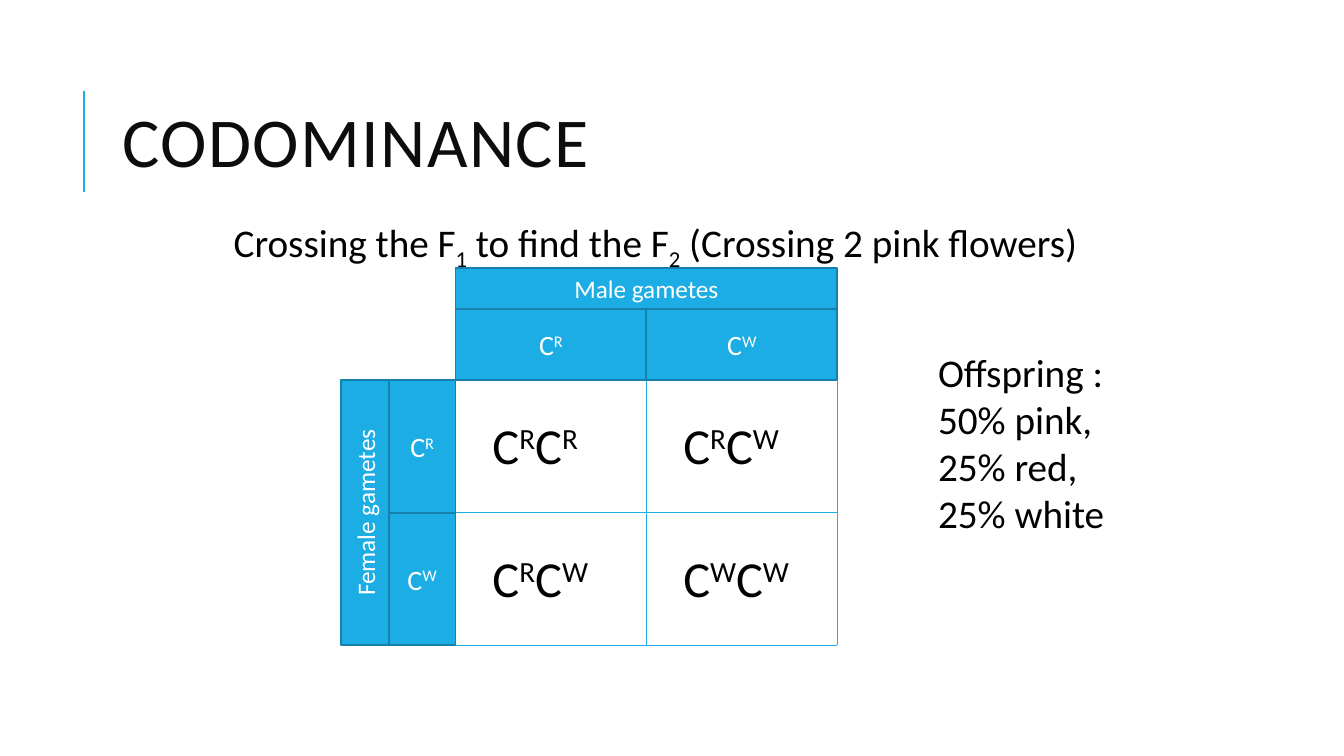
from dataclasses import dataclass

from lxml.etree import SubElement
from pptx import Presentation
from pptx.dml.color import RGBColor
from pptx.enum.shapes import MSO_CONNECTOR, MSO_SHAPE
from pptx.enum.text import MSO_ANCHOR, MSO_AUTO_SIZE, PP_ALIGN
from pptx.oxml.ns import qn
from pptx.util import Cm, Pt


@dataclass(frozen=True)
class Theme:
    font: str = "Calibri"
    accent: str = "1CADE4"
    border: str = "1580A9"
    title: str = "0D0D0D"
    text: str = "000000"
    light: str = "FFFFFF"
    title_size: int = 50
    body_size: int = 28
    genotype_size: int = 36
    allele_size: int = 20
    label_size: int = 18


THEME = Theme()
ALLELES = ("R", "W")
SUPERSCRIPT, SUBSCRIPT = 30, -25

# Punnett square, in centimetres
GRID_LEFT, GRID_TOP = 11.48, 9.58
COL_W, ROW_H = 4.81, 3.34
GRID_RIGHT, GRID_BOTTOM = GRID_LEFT + 2 * COL_W, GRID_TOP + 2 * ROW_H
MALE_H, MALE_ALLELE_H = 1.02, 1.8
FEMALE_W, FEMALE_ALLELE_W = 1.2, 1.68


def rgb(value):
    return RGBColor.from_string(value)


def write(tf, text, size, color=THEME.text, align=PP_ALIGN.LEFT, shift=SUPERSCRIPT,
          anchor=MSO_ANCHOR.TOP, spacing=None, tracking=None):
    """Fill a text frame, one paragraph a line; parts between bars are shifted."""
    tf.word_wrap = True
    tf.auto_size = MSO_AUTO_SIZE.NONE
    tf.vertical_anchor = anchor
    for i, line in enumerate(text.split("\n")):
        p = tf.add_paragraph() if i else tf.paragraphs[0]
        p.alignment = align
        p.line_spacing = spacing
        for j, part in enumerate(line.split("|")):
            if not part:
                continue
            r = p.add_run()
            r.text = part
            r.font.name = THEME.font
            r.font.size = Pt(size)
            r.font.color.rgb = rgb(color)
            props = r._r.get_or_add_rPr()
            if j % 2:
                props.set("baseline", str(shift * 1000))
            if tracking:
                props.set("spc", str(tracking * 100))


def place(sp, left, top, width, height):
    sp.left, sp.top, sp.width, sp.height = map(Cm, (left, top, width, height))


def add_text(s, box, text, size):
    sp = s.shapes.add_textbox(*map(Cm, box))
    write(sp.text_frame, text, size)


def add_header(s, box, text, size, upward=False):
    sp = s.shapes.add_shape(MSO_SHAPE.RECTANGLE, *map(Cm, box))
    sp.shadow.inherit = False
    sp.fill.solid()
    sp.fill.fore_color.rgb = rgb(THEME.accent)
    sp.line.color.rgb = rgb(THEME.border)
    sp.line.width = Pt(1.25)
    tf = sp.text_frame
    write(tf, text, size, THEME.light, PP_ALIGN.CENTER, anchor=MSO_ANCHOR.MIDDLE)
    if upward:
        tf._txBody.bodyPr.set("vert", "vert270")


def add_line(s, x1, y1, x2, y2, width=0.75):
    line = s.shapes.add_connector(MSO_CONNECTOR.STRAIGHT, *map(Cm, (x1, y1, x2, y2)))
    line.line.color.rgb = rgb(THEME.accent)
    line.line.width = Pt(width)
    SubElement(line._element.spPr, qn("a:effectLst"))


def add_title_and_body(s):
    add_line(s, 2.11, 4.83, 2.11, 2.29, 1.5)
    title, body = s.shapes.title, s.placeholders[1]
    place(title, 2.84, 1.63, 27, 4.17)
    write(title.text_frame, "CODOMINANCE", THEME.title_size, THEME.title,
          anchor=MSO_ANCHOR.MIDDLE, spacing=0.8, tracking=1)

    place(body, 5.51, 5.38, 22.86, 12.67)
    tf = body.text_frame
    tf.margin_left = tf.margin_right = tf.margin_top = tf.margin_bottom = Cm(0.13)
    write(tf, "Crossing the F|1| to find the F|2| (Crossing 2 pink flowers)",
          THEME.body_size, shift=SUBSCRIPT, spacing=0.9)
    p = tf.paragraphs[0]
    p.space_before, p.space_after = Pt(12), Pt(2)
    props = p._p.get_or_add_pPr()
    props.set("marL", str(Cm(0.25)))
    props.set("indent", "0")
    SubElement(props, qn("a:buNone"))


def add_punnett_square(s):
    allele_top = GRID_TOP - MALE_ALLELE_H
    allele_left = GRID_LEFT - FEMALE_ALLELE_W
    add_header(s, (GRID_LEFT, allele_top - MALE_H, 2 * COL_W, MALE_H),
               "Male gametes", THEME.label_size)
    add_header(s, (allele_left - FEMALE_W, GRID_TOP, FEMALE_W, 2 * ROW_H),
               "Female gametes", THEME.label_size, upward=True)
    for i, allele in enumerate(ALLELES):
        x, y = GRID_LEFT + i * COL_W, GRID_TOP + i * ROW_H
        add_header(s, (x, allele_top, COL_W, MALE_ALLELE_H),
                   f"C|{allele}|", THEME.allele_size)
        add_header(s, (allele_left, y, FEMALE_ALLELE_W, ROW_H),
                   f"C|{allele}|", THEME.allele_size)
        add_line(s, x + COL_W, GRID_TOP, x + COL_W, GRID_BOTTOM)
        add_line(s, GRID_LEFT, y + ROW_H, GRID_RIGHT, y + ROW_H)

    for row, female in enumerate(ALLELES):
        for col, male in enumerate(ALLELES):
            first, second = sorted((female, male))
            box = (GRID_LEFT + col * COL_W + 0.68, GRID_TOP + row * ROW_H + 0.74, 3.8, 1.8)
            add_text(s, box, f"C|{first}|C|{second}|", THEME.genotype_size)


def main():
    prs = Presentation()
    prs.slide_width, prs.slide_height = Cm(33.87), Cm(19.05)
    s = prs.slides.add_slide(prs.slide_layouts[1])
    add_title_and_body(s)
    add_punnett_square(s)
    add_text(s, (23.39, 8.64, 9.68, 6.25),
             "Offspring :\n50% pink,\n25% red,\n25% white", THEME.body_size)
    prs.save("out.pptx")


if __name__ == "__main__":
    main()
